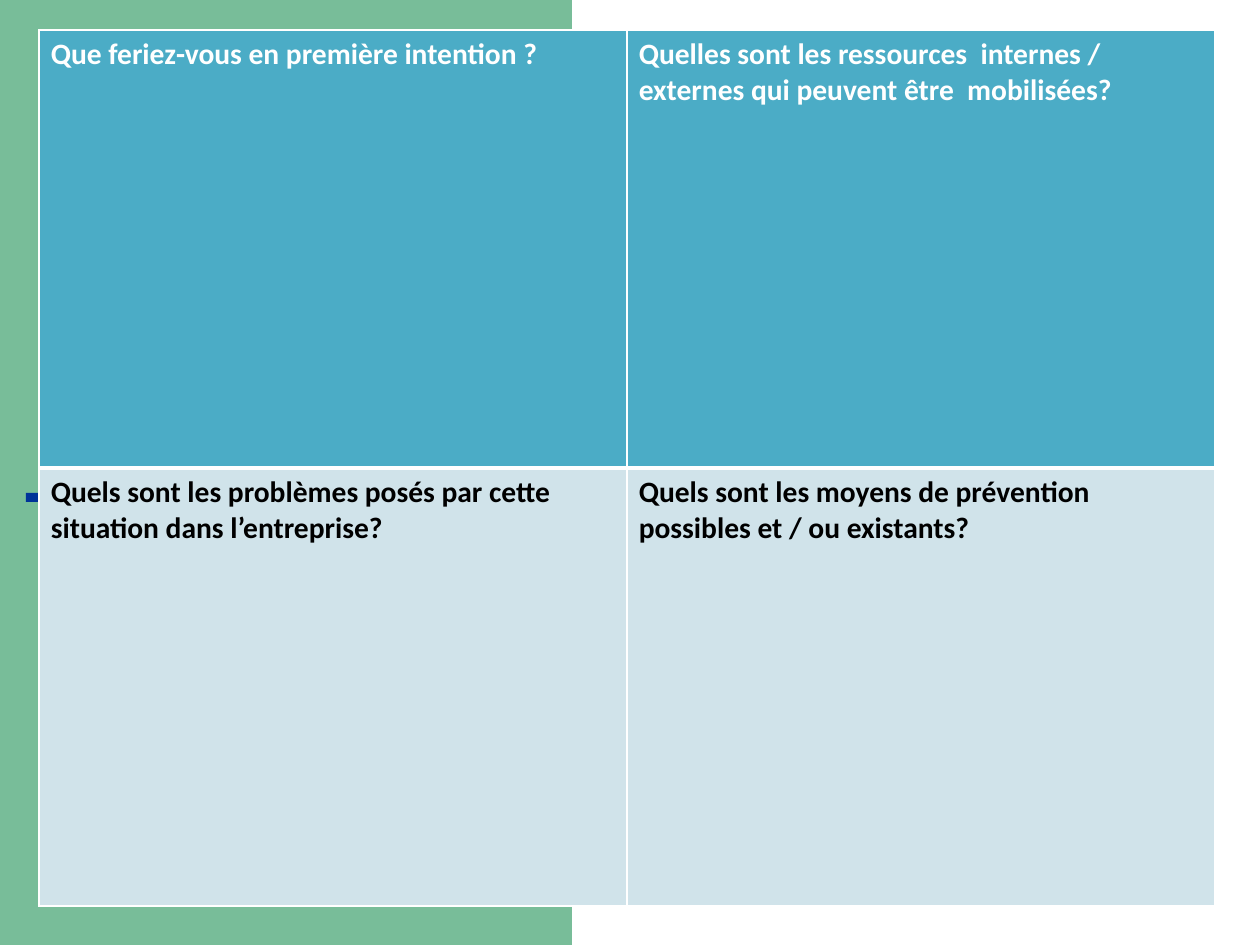
"""Build a slide with a two-by-two grid of discussion questions."""
from lxml import etree
from pptx import Presentation
from pptx import util as u
from pptx.dml.color import RGBColor
from pptx.enum import shapes
from pptx.oxml.ns import qn

SCALE = 914400 / 118.1
WIDTH, HEIGHT = 1260, 945
DECOR = [
    ((0, 0, 572, HEIGHT), "78BD99"),
    ((26, 493, 83, 9), "003399"),
]
TABLE = (39, 30, 1176, 876)
QUESTIONS = [
    ["Que feriez-vous en première intention ?",
     "Quelles sont les ressources  internes / externes qui peuvent être  mobilisées?"],
    ["Quels sont les problèmes posés par cette situation dans l’entreprise?",
     "Quels sont les moyens de prévention possibles et / ou existants?"],
]
ROW_STYLES = [
    {"fill": "4BACC6", "font": "FFFFFF", "borders": {"L": 1, "R": 1, "T": 1, "B": 3}},
    {"fill": "D0E3EA", "font": "000000", "borders": {"L": 1, "R": 1, "T": 3, "B": 1}},
]
BORDER = "FFFFFF"


def px(n):
    return u.Emu(round(n * SCALE))


def rgb(color):
    return RGBColor.from_string(color)


def add_block(s, box, color):
    sp = s.shapes.add_shape(shapes.MSO_SHAPE.RECTANGLE, *map(px, box))
    sp.shadow.inherit = False
    sp.fill.solid()
    sp.fill.fore_color.rgb = rgb(color)
    sp.line.fill.background()


def set_borders(cell, widths):
    tc_pr = cell._tc.get_or_add_tcPr()
    for side, width in widths.items():
        ln = etree.SubElement(tc_pr, qn(f"a:ln{side}"), w=str(u.Pt(width)))
        fill = etree.SubElement(ln, qn("a:solidFill"))
        etree.SubElement(fill, qn("a:srgbClr"), val=BORDER)


def fill_cell(cell, question, style):
    set_borders(cell, style["borders"])
    cell.fill.solid()
    cell.fill.fore_color.rgb = rgb(style["fill"])
    r = cell.text_frame.paragraphs[0].add_run()
    r.text = question
    r.font.name = "Calibri"
    r.font.size = u.Pt(18)
    r.font.bold = True
    r.font.color.rgb = rgb(style["font"])


def add_questions(s):
    rows, cols = len(QUESTIONS), len(QUESTIONS[0])
    table = s.shapes.add_table(rows, cols, *map(px, TABLE)).table
    for col in table.columns:
        col.width = px(TABLE[2] / cols)
    for i, (questions, style) in enumerate(zip(QUESTIONS, ROW_STYLES)):
        table.rows[i].height = px(TABLE[3] / rows)
        for j, question in enumerate(questions):
            fill_cell(table.cell(i, j), question, style)


def main():
    prs = Presentation()
    prs.slide_width, prs.slide_height = px(WIDTH), px(HEIGHT)
    s = prs.slides.add_slide(prs.slide_layouts[6])
    for box, color in DECOR:
        add_block(s, box, color)
    add_questions(s)
    prs.save("out.pptx")


if __name__ == "__main__":
    main()
